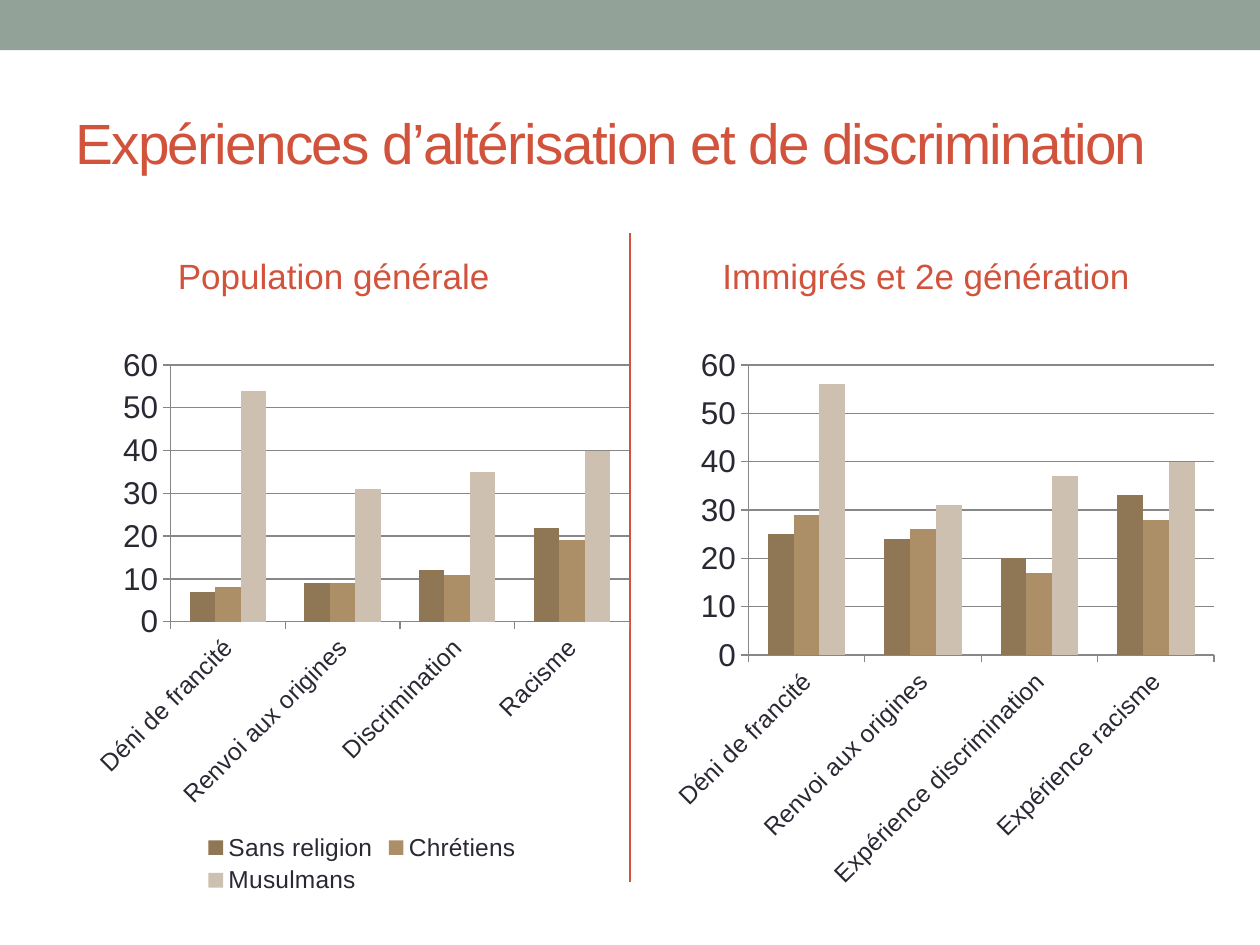
from pptx import Presentation
from pptx.chart.data import CategoryChartData
from pptx.dml.color import RGBColor
from pptx.enum.chart import XL_CHART_TYPE, XL_LEGEND_POSITION, XL_TICK_LABEL_POSITION, XL_TICK_MARK
from pptx.enum.shapes import MSO_CONNECTOR, MSO_SHAPE
from pptx.enum.text import MSO_ANCHOR, PP_ALIGN
from pptx.oxml.ns import qn
from pptx.util import Pt
from lxml.etree import SubElement

FONT = "Arial"
RED, SAGE, INK, GREY = "D2533C", "93A299", "292934", "878787"
BAR_COLORS = ["8F7755", "AD8F67", "CDC0B0"]

PANELS = [
    {"heading": "Population générale", "left": 36, "chart": (47.8, 318.2),
     "cats": ["Déni de francité", "Renvoi aux origines", "Discrimination", "Racisme"],
     "series": {"Sans religion": (7, 9, 12, 22), "Chrétiens": (8, 9, 11, 19),
                "Musulmans": (54, 31, 35, 40)},
     "legend": True},
    {"heading": "Immigrés et 2e génération", "left": 374.4, "chart": (378, 322.2),
     "cats": ["Déni de francité", "Renvoi aux origines",
              "Expérience discrimination", "Expérience racisme"],
     "series": {"Series 1": (25, 24, 20, 33), "Series 2": (29, 26, 17, 28),
                "Series 3": (56, 31, 37, 40)},
     "legend": False},
]


def rgb(value):
    return RGBColor.from_string(value)


def set_font(font, size, color):
    for name, value in {"name": FONT, "size": Pt(size), "bold": False}.items():
        setattr(font, name, value)
    font.color.rgb = rgb(color)


def add_band(s, color, height):
    band = s.shapes.add_shape(MSO_SHAPE.RECTANGLE, 0, 0, Pt(720), Pt(height))
    band.shadow.inherit = False
    band.fill.solid()
    band.fill.fore_color.rgb = rgb(color)
    band.line.fill.background()


def add_divider(s, x, top, bottom):
    line = s.shapes.add_connector(MSO_CONNECTOR.STRAIGHT, Pt(x), Pt(top), Pt(x), Pt(bottom))
    line.line.color.rgb = rgb(RED)
    line.line.width = Pt(1.5)
    SubElement(line._element.spPr, qn("a:effectLst"))


def add_text(s, text, box, size, align=PP_ALIGN.LEFT, spacing=0, before=0):
    tf = s.shapes.add_textbox(*map(Pt, box)).text_frame
    for name, value in {"word_wrap": True, "vertical_anchor": MSO_ANCHOR.MIDDLE}.items():
        setattr(tf, name, value)
    p = tf.paragraphs[0]
    p.alignment = align
    p.space_before = Pt(before)
    r = p.add_run()
    r.text = text
    set_font(r.font, size, RED)
    if spacing:
        r.font._element.set("spc", str(spacing * 100))


def format_axis(axis, size):
    formats = {"major_tick_mark": XL_TICK_MARK.OUTSIDE, "minor_tick_mark": XL_TICK_MARK.NONE,
               "tick_label_position": XL_TICK_LABEL_POSITION.LOW}
    for name, value in formats.items():
        setattr(axis, name, value)
    set_font(axis.tick_labels.font, size, INK)
    axis.format.line.color.rgb = rgb(GREY)
    axis.format.line.width = Pt(0.75)


def add_columns(s, panel):
    data = CategoryChartData()
    data.categories = panel["cats"]
    for name, values in panel["series"].items():
        data.add_series(name, values)
    left, width = panel["chart"]
    chart = s.shapes.add_chart(XL_CHART_TYPE.COLUMN_CLUSTERED, Pt(left), Pt(192),
                               Pt(width), Pt(321.8), data).chart
    set_font(chart.font, 18, INK)
    chart.has_title = False

    # Bars
    plot = chart.plots[0]
    plot.gap_width = 150
    plot.overlap = 0
    plot.vary_by_categories = False
    for series, color in zip(plot.series, BAR_COLORS):
        series.format.fill.solid()
        series.format.fill.fore_color.rgb = rgb(color)

    # Axes: long category labels slant by themselves
    format_axis(chart.category_axis, 14)
    value_axis = chart.value_axis
    format_axis(value_axis, 18)
    for name, value in {"minimum_scale": 0, "maximum_scale": 60, "major_unit": 10}.items():
        setattr(value_axis, name, value)
    grid = value_axis.major_gridlines.format.line
    grid.color.rgb = rgb(GREY)
    grid.width = Pt(0.75)

    # Legend
    chart.has_legend = panel["legend"]
    if panel["legend"]:
        chart.legend.position = XL_LEGEND_POSITION.BOTTOM
        chart.legend.include_in_layout = False
        set_font(chart.legend.font, 14, INK)


def main():
    prs = Presentation()
    prs.slide_width, prs.slide_height = Pt(720), Pt(540)
    s = prs.slides.add_slide(prs.slide_layouts[6])

    # Frame and title
    add_band(s, SAGE, 28.6)
    add_divider(s, 360, 133.2, 504)
    add_text(s, "Expériences d’altérisation et de discrimination",
             (36, 42.3, 648, 77.8), 32.4, spacing=-1)

    # Two panels
    for panel in PANELS:
        add_text(s, panel["heading"], (panel["left"], 132.3, 309.6, 50.4), 20,
                 PP_ALIGN.CENTER, before=4)
        add_columns(s, panel)
    prs.save("out.pptx")


if __name__ == "__main__":
    main()
